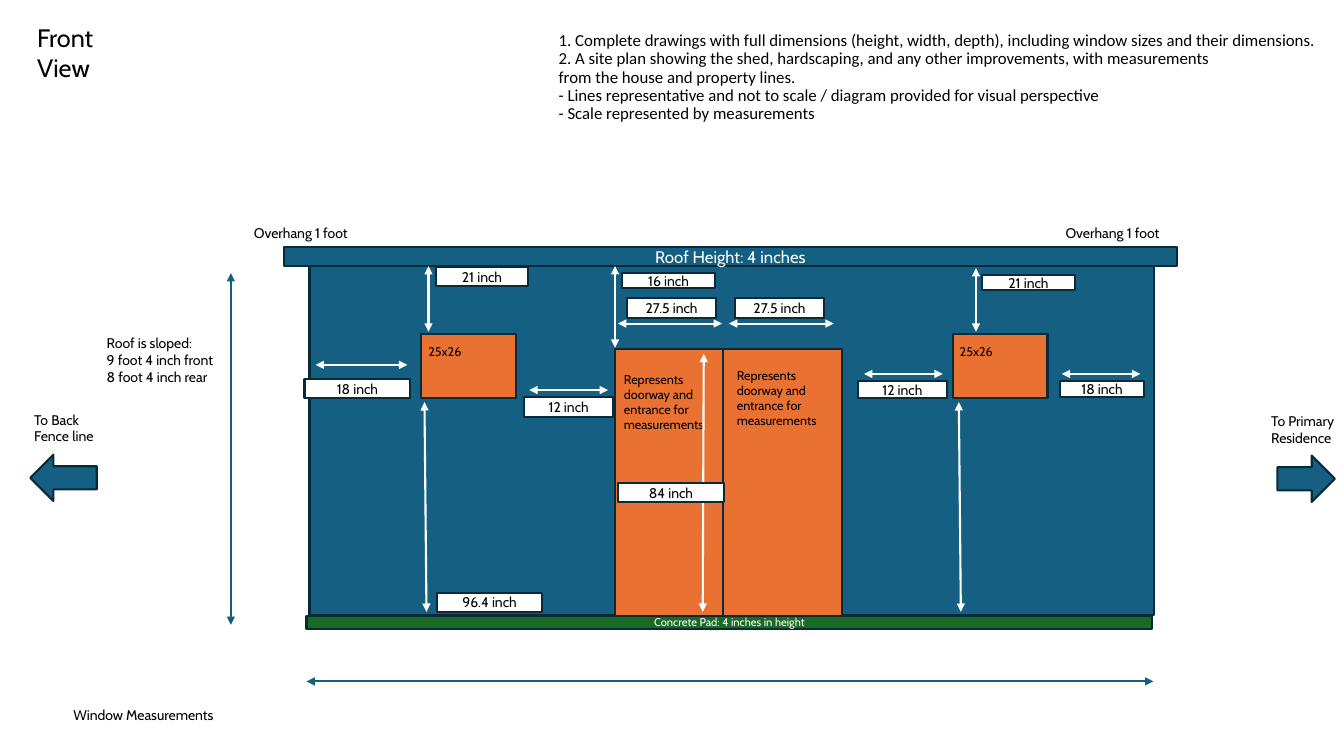
from lxml import etree
from pptx import Presentation
from pptx.dml.color import RGBColor
from pptx.enum.shapes import MSO_CONNECTOR, MSO_SHAPE
from pptx.enum.text import MSO_ANCHOR as ANCHOR
from pptx.enum.text import MSO_AUTO_SIZE as AUTO_SIZE
from pptx.enum.text import PP_ALIGN as ALIGN
from pptx.oxml.ns import qn
from pptx.util import Inches, Pt

BLUE = RGBColor(0x15, 0x60, 0x82)
NAVY = RGBColor(0x09, 0x2A, 0x39)
ORANGE = RGBColor(0xE9, 0x71, 0x32)
GREEN = RGBColor(0x19, 0x6B, 0x24)
WHITE = RGBColor(0xFF, 0xFF, 0xFF)
BLACK = RGBColor(0, 0, 0)

REQUIREMENTS = [
    "1. Complete drawings with full dimensions (height, width, depth), including window sizes and their dimensions.",
    "2. A site plan showing the shed, hardscaping, and any other improvements, with measurements",
    "from the house and property lines.",
    "- Lines representative and not to scale / diagram provided for visual perspective",
    "- Scale represented by measurements",
]
DOOR_TEXT = "Represents doorway and entrance for measurements"

# Arrows on the wall: start x, start y, end x, end y from the wall's corner
WALL_ARROWS = [
    (1.14, 1.35, 1.16, 3.43), (6.44, 1.35, 6.46, 3.43),  # below windows
    (1.18, 0.65, 1.18, 0), (6.61, 0.02, 6.61, 0.65),  # above windows
    (3.03, 0, 3.03, 0.81), (3.91, 0.87, 3.9, 3.43),  # door
    (4.09, 0.57, 3.06, 0.57), (5.2, 0.57, 4.16, 0.57),  # door widths
    (0.97, 0.98, 0.06, 0.98), (2.96, 1.23, 2.18, 1.23),  # left window sides
    (6.28, 1.07, 5.5, 1.07), (8.24, 1.07, 7.46, 1.07),  # right window sides
]
# Measurement labels: text, x, y, width, height from the wall's corner
WALL_LABELS = [
    ("96.4 inch", 1.26, 3.24, 1.05, 0.19),
    ("21 inch", 1.25, 0.01, 0.92, 0.19),
    ("21 inch", 6.67, 0.09, 0.92, 0.15),
    ("16 inch", 3.1, 0.07, 0.92, 0.15),
    ("18 inch", -0.05, 1.12, 1.05, 0.19),
    ("12 inch", 2.13, 1.3, 0.88, 0.2),
    ("12 inch", 5.44, 1.14, 0.88, 0.17),
    ("18 inch", 7.44, 1.14, 0.84, 0.16),
    ("84 inch", 3.06, 2.15, 1.05, 0.19),
    ("27.5 inch", 3.15, 0.32, 0.88, 0.2),
    ("27.5 inch", 4.22, 0.32, 0.88, 0.2),
]


def add_run(p, text, size, color=BLACK, font="Cabin"):
    r = p.add_run()
    r.text = text
    r.font.size = Pt(size)
    r.font.name = font
    r.font.color.rgb = color


def add_block(slide, x, y, w, h, fill, text="", size=10, color=BLACK,
              kind=MSO_SHAPE.RECTANGLE):
    sp = slide.shapes.add_shape(kind, Inches(x), Inches(y), Inches(w), Inches(h))
    sp.shadow.inherit = False
    sp.fill.solid()
    sp.fill.fore_color.rgb = fill
    sp.line.color.rgb = NAVY
    sp.line.width = Pt(1.5)
    if text:
        tf = sp.text_frame
        tf.word_wrap = True
        tf.vertical_anchor = ANCHOR.MIDDLE
        p = tf.paragraphs[0]
        p.alignment = ALIGN.CENTER
        add_run(p, text, size, color)
    return sp


def add_note(slide, x, y, w, h, lines, size=10, wrap=True):
    sp = slide.shapes.add_textbox(Inches(x), Inches(y), Inches(w), Inches(h))
    tf = sp.text_frame
    tf.word_wrap = wrap
    tf.auto_size = AUTO_SIZE.SHAPE_TO_FIT_TEXT
    for i, line in enumerate(lines):
        p = tf.add_paragraph() if i else tf.paragraphs[0]
        add_run(p, line, size)
    return sp


def add_arrow(slide, x1, y1, x2, y2, color):
    line = slide.shapes.add_connector(
        MSO_CONNECTOR.STRAIGHT, Inches(x1), Inches(y1), Inches(x2), Inches(y2))
    line.line.color.rgb = color
    line.line.width = Pt(1.5)
    ln = line.line._get_or_add_ln()
    for end in ("a:headEnd", "a:tailEnd"):
        etree.SubElement(ln, qn(end), type="triangle")
    etree.SubElement(line._element.spPr, qn("a:effectLst"))


def write_title(slide, x, y, w, h):
    title = slide.shapes.title
    title.left, title.top = Inches(x), Inches(y)
    title.width, title.height = Inches(w), Inches(h)
    tf = title.text_frame
    tf.word_wrap = True
    tf.auto_size = AUTO_SIZE.NONE
    tf.vertical_anchor = ANCHOR.MIDDLE
    p = tf.paragraphs[0]
    p.alignment = ALIGN.LEFT
    p.line_spacing = 0.9
    for i, line in enumerate(REQUIREMENTS):
        if i:
            p.add_line_break()
        add_run(p, line, 12, font="Calibri")


def draw_window(slide, x, y, w, h):
    add_block(slide, x, y, w, h, ORANGE)
    add_note(slide, x - 0.03, y + 0.05, 1.07, 0.25, ["25x26"], 9)


def draw_door(slide, x, y, w, h, text_dx, text_dy):
    add_block(slide, x, y, w, h, ORANGE)
    add_note(slide, x + text_dx, y + text_dy, 1.07, 0.71, [DOOR_TEXT], 9)


def draw_shed(slide, x, y, w, h):
    # Wall, roof and concrete pad
    add_block(slide, x, y, w, h, BLUE)
    add_block(slide, x - 0.25, y - 0.19, w + 0.47, 0.19, BLUE,
              "Roof Height: 4 inches", 12, WHITE)
    add_block(slide, x - 0.03, y + h + 0.01, w + 0.01, 0.13, GREEN,
              "Concrete Pad: 4 inches in height", 8, WHITE)
    for dx in (-0.65, 7.4):
        add_note(slide, x + dx, y - 0.46, 1.16, 0.27, ["Overhang 1 foot"], wrap=False)

    # Windows and double door
    for dx in (1.11, 6.38):
        draw_window(slide, x + dx, y + 0.67, 0.94, 0.64)
    draw_door(slide, x + 3.03, y + 0.82, 1.07, 2.65, -0.01, 0.18)
    draw_door(slide, x + 4.1, y + 0.82, 1.18, 2.65, 0.04, 0.14)

    # Measurements
    for x1, y1, x2, y2 in WALL_ARROWS:
        add_arrow(slide, x + x1, y + y1, x + x2, y + y2, WHITE)
    for text, dx, dy, lw, lh in WALL_LABELS:
        add_block(slide, x + dx, y + dy, lw, lh, WHITE, text)

    # Overall height and width
    add_arrow(slide, x - 0.78, y + 0.07, x - 0.78, y + h + 0.1, BLUE)
    add_arrow(slide, x - 0.03, y + h + 0.66, x + w - 0.01, y + h + 0.66, BLUE)
    add_note(slide, x - 2.11, y + 0.63, 1.32, 0.61,
             ["Roof is sloped:", "9 foot 4 inch front", "8 foot 4 inch rear"])


def draw_direction(slide, x, y, w, h, text, text_dx, text_w, rotation=0):
    sp = add_block(slide, x, y, w, h, BLUE, kind=MSO_SHAPE.RIGHT_ARROW)
    sp.rotation = rotation
    add_note(slide, x + text_dx, y - 0.48, text_w, 0.44, [text])


def main():
    prs = Presentation()
    prs.slide_width, prs.slide_height = Inches(13.33), Inches(7.5)
    slide = prs.slides.add_slide(prs.slide_layouts[5])
    write_title(slide, 5.44, 0.07, 7.8, 1.4)
    add_note(slide, 0.27, 0.17, 1.22, 0.37, ["Front View"], 18)
    draw_shed(slide, 3.07, 2.64, 8.38, 3.46)
    draw_direction(slide, 0.3, 4.51, 0.66, 0.46, "To Back Fence line", -0.06, 0.82, 180)
    draw_direction(slide, 12.67, 4.52, 0.57, 0.46, "To Primary Residence", -0.16, 0.93)
    add_note(slide, 0.63, 6.96, 1.66, 0.27, ["Window Measurements"])
    prs.save("out.pptx")


if __name__ == "__main__":
    main()
